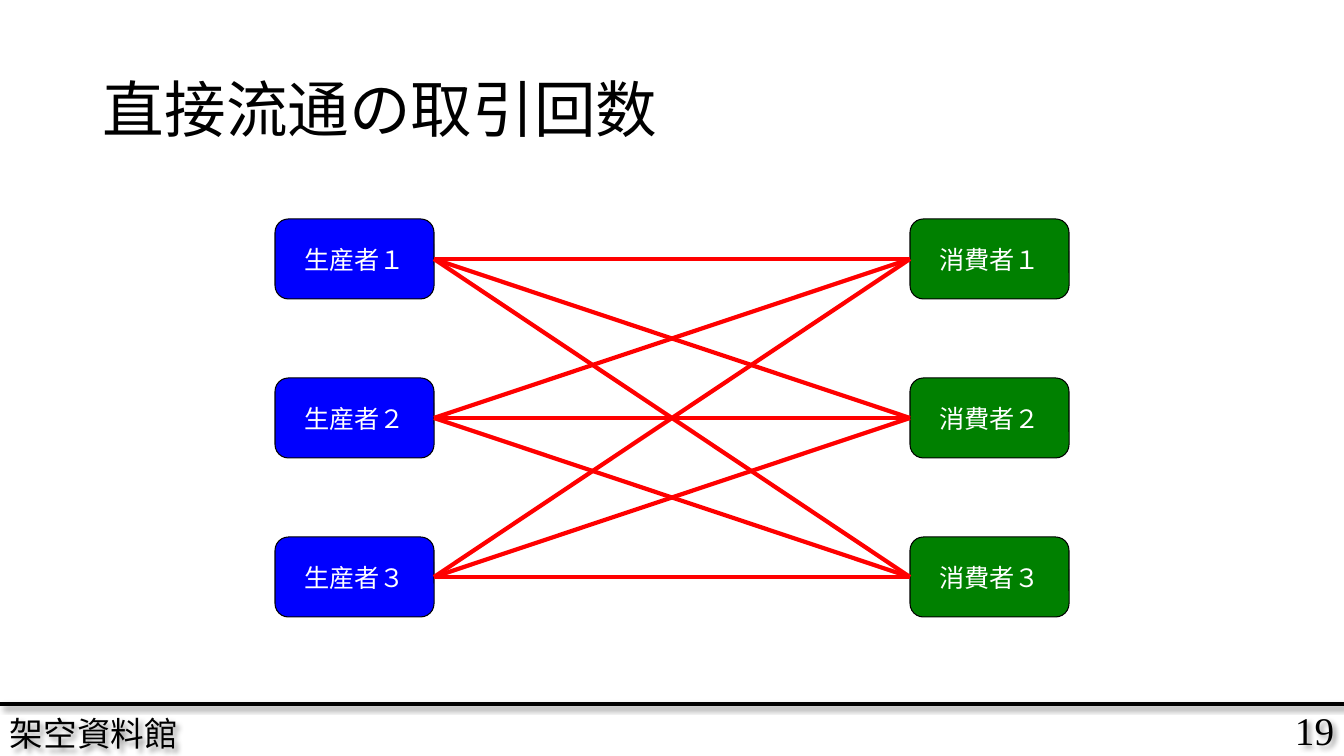
from pptx import Presentation
from pptx.dml.color import RGBColor
from pptx.enum.shapes import MSO_CONNECTOR, MSO_SHAPE
from pptx.enum.text import MSO_ANCHOR, PP_ALIGN
from pptx.oxml import parse_xml
from pptx.oxml.ns import nsdecls, qn
from pptx.util import Emu, Pt

PX = 914400 / 100.8
COLORS = {"black": "000000", "white": "FFFFFF", "producer": "0000FF",
          "consumer": "008000", "deal": "FF0000"}
SHADOW = ('<a:outerShdw blurRad="50800" dist="38100" dir="2700000" algn="tl" rotWithShape="0">'
          '<a:srgbClr val="000000"><a:alpha val="40000"/></a:srgbClr></a:outerShdw>')


def add_line(x1, y1, x2, y2, color, effect=""):
    ends = [Emu(round(n * PX)) for n in (x1, y1, x2, y2)]
    line = s.shapes.add_connector(MSO_CONNECTOR.STRAIGHT, *ends)
    line.line.color.rgb = RGBColor.from_string(COLORS[color])
    line.line.width = Pt(3)
    line._element.spPr.append(parse_xml(f'<a:effectLst {nsdecls("a")}>{effect}</a:effectLst>'))


def add_text(sp, text, size, color, align, font="Times New Roman"):
    tf = sp.text_frame
    tf.vertical_anchor = MSO_ANCHOR.MIDDLE
    p = tf.paragraphs[0]
    p.alignment = align
    r = p.add_run()
    r.text = text
    r.font.size = Pt(size)
    r.font.name = font
    r.font.color.rgb = RGBColor.from_string(COLORS[color])
    ea = r._r.get_or_add_rPr().makeelement(qn("a:ea"), {"typeface": "Noto Sans CJK JP"})
    r._r.rPr.find(qn("a:latin")).addnext(ea)
    return p


prs = Presentation()
prs.slide_width, prs.slide_height = Emu(round(1344 * PX)), Emu(round(756 * PX))
s = prs.slides.add_slide(prs.slide_layouts[6])

footers = [("19", 28, PP_ALIGN.RIGHT, (1164, 704, 180, 51)),
           ("架空資料館", 24, PP_ALIGN.LEFT, (0, 711, 363, 45))]
for text, size, align, box in footers:
    sp = s.shapes.add_textbox(*[Emu(round(n * PX)) for n in box])
    sp.text_frame.word_wrap = True
    sp._element.spPr.append(parse_xml(f'<a:effectLst {nsdecls("a")}>{SHADOW}</a:effectLst>'))
    add_text(sp, text, size, "black", align)

add_line(0, 704, 1344, 704, "black", SHADOW)

title = s.shapes.add_textbox(*[Emu(round(n * PX)) for n in (93, 40, 1159, 146)])
title.text_frame.word_wrap = True
p = add_text(title, "直接流通の取引回数", 44, "black", PP_ALIGN.LEFT, "Noto Sans CJK JP")
p.line_spacing = 0.9

BOX_W, BOX_H, TOP, PITCH = 159, 80, 219, 159
PRODUCER_X, CONSUMER_X = 275, 910
rows = [TOP + i * PITCH for i in range(3)]

for name, x, color in [("生産者", PRODUCER_X, "producer"), ("消費者", CONSUMER_X, "consumer")]:
    for y, digit in zip(rows, "１２３"):
        box = [Emu(round(n * PX)) for n in (x, y, BOX_W, BOX_H)]
        sp = s.shapes.add_shape(MSO_SHAPE.ROUNDED_RECTANGLE, *box)
        sp.shadow.inherit = False
        sp.fill.solid()
        sp.fill.fore_color.rgb = RGBColor.from_string(COLORS[color])
        sp.line.color.rgb = RGBColor.from_string(COLORS["black"])
        sp.line.width = Pt(0.75)
        sp.text_frame.word_wrap = False
        add_text(sp, name + digit, 18, "white", PP_ALIGN.CENTER)

for y1 in rows:
    for y2 in rows:
        add_line(PRODUCER_X + BOX_W, y1 + BOX_H // 2, CONSUMER_X, y2 + BOX_H // 2, "deal")

prs.save("out.pptx")
